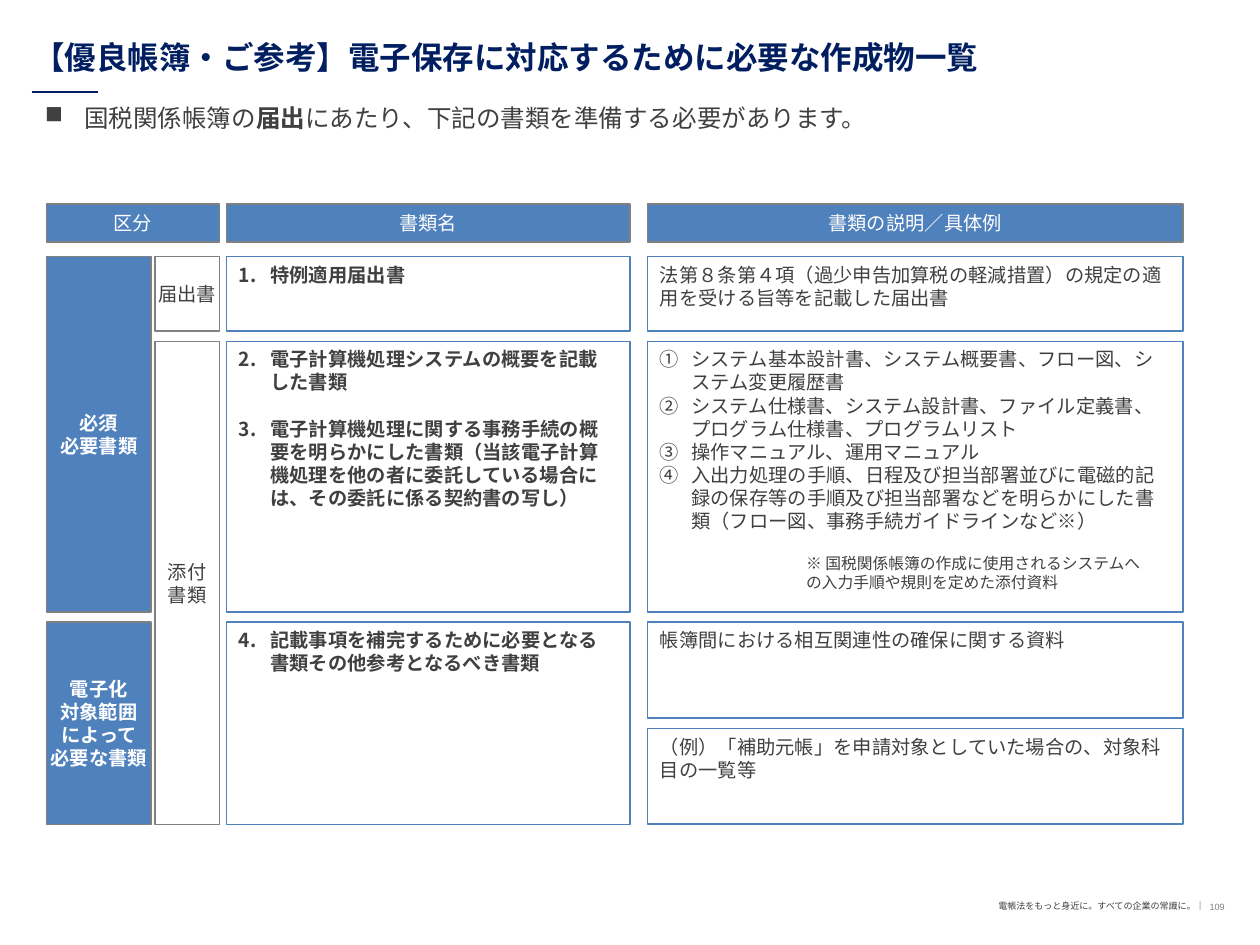
from lxml.etree import SubElement
from pptx import Presentation
from pptx.dml.color import RGBColor
from pptx.enum.shapes import MSO_CONNECTOR, MSO_SHAPE
from pptx.enum.text import MSO_ANCHOR, PP_ALIGN
from pptx.oxml.ns import qn
from pptx.util import Pt

NAVY = RGBColor(0x00, 0x1E, 0x60)
RULE = RGBColor(0x00, 0x1F, 0x60)
BLUE = RGBColor(0x4F, 0x81, 0xBD)
GRAY = RGBColor(0x80, 0x80, 0x80)
DARK = RGBColor(0x40, 0x40, 0x40)
WHITE = RGBColor(0xFF, 0xFF, 0xFF)
NOTO, KARLA, ARIAL = "Noto Sans CJK JP", "Karla", "Arial"


def add_run(p, text, size, color=DARK, bold=False, font=NOTO):
    r = p.add_run()
    r.text = text
    r.font.size = Pt(size)
    r.font.bold = bold
    r.font.color.rgb = color
    r.font.name = font
    SubElement(r._r.get_or_add_rPr(), qn("a:ea"), typeface=NOTO)


def add_bullet(p, indent, tag, **attrs):
    pPr = p._p.get_or_add_pPr()
    pPr.set("marL", str(Pt(indent)))
    pPr.set("indent", str(-Pt(indent)))
    SubElement(pPr, qn(tag), **attrs)


def paragraphs(tf, count):
    return [tf.paragraphs[0]] + [tf.add_paragraph() for _ in range(count - 1)]


def text_box(s, x, y, w, h):
    tf = s.shapes.add_textbox(Pt(x), Pt(y), Pt(w), Pt(h)).text_frame
    tf.word_wrap = True
    return tf


def box(s, x, y, w, h, fill, line):
    sp = s.shapes.add_shape(MSO_SHAPE.RECTANGLE, Pt(x), Pt(y), Pt(w), Pt(h))
    sp.shadow.inherit = False
    if fill is None:
        sp.fill.background()
    else:
        sp.fill.solid()
        sp.fill.fore_color.rgb = fill
    sp.line.color.rgb = line
    sp.line.width = Pt(1)
    return sp.text_frame


def label(s, x, y, w, h, lines, fill=BLUE, color=WHITE, bold=False):
    tf = box(s, x, y, w, h, fill, GRAY)
    tf.word_wrap = False
    tf.vertical_anchor = MSO_ANCHOR.MIDDLE
    for p, text in zip(paragraphs(tf, len(lines)), lines):
        p.alignment = PP_ALIGN.CENTER
        add_run(p, text, 11, color, bold, KARLA)


def body(s, x, y, w, h, items, scheme=None, start=1, gap=0, bold=False, font=NOTO):
    tf = box(s, x, y, w, h, WHITE, BLUE)
    tf.word_wrap = True
    tf.vertical_anchor = MSO_ANCHOR.TOP
    for i, (p, text) in enumerate(zip(paragraphs(tf, len(items)), items)):
        p.alignment = PP_ALIGN.LEFT
        if i and gap:
            p.space_before = Pt(gap)
        if scheme:
            add_bullet(p, 18, "a:buAutoNum", type=scheme, startAt=str(start + i))
        add_run(p, text, 11, bold=bold, font=font)


def heading(s, x, y, w):
    add_run(text_box(s, x, y, w, 35).paragraphs[0],
            "【優良帳簿・ご参考】電子保存に対応するために必要な作成物一覧", 18, NAVY, True)
    line = s.shapes.add_connector(MSO_CONNECTOR.STRAIGHT, Pt(x + 6), Pt(y + 34.6),
                                  Pt(x + 44), Pt(y + 34.6))
    line.line.color.rgb = RULE
    line.line.width = Pt(1)
    SubElement(line._element.spPr, qn("a:effectLst"))
    p = text_box(s, x + 6.5, y + 37.4, w - 12, 47.5).paragraphs[0]
    add_bullet(p, 22.5, "a:buChar", char="■")
    for text, bold in [("国税関係帳簿の", False), ("届出", True),
                       ("にあたり、下記の書類を準備する必要があります。", False)]:
        add_run(p, text, 14, bold=bold)


def document_table(s, x, y):
    kind_x, name_x, note_x = x + 62, x + 103, x + 343.5
    group_w, kind_w, name_w, note_w = 60, 37, 230.5, 306
    gap = 6
    row1, row2, row3 = y + 30, y + 78.5, y + 239
    h1, h2, h3 = 42.5, 154.5, 115.5
    half = (h3 - gap) / 2

    for left, w, text in [(x, kind_x + kind_w - x, "区分"), (name_x, name_w, "書類名"),
                          (note_x, note_w, "書類の説明／具体例")]:
        label(s, left, y, w, 21.6, [text])

    label(s, x, row1, group_w, row2 + h2 - row1, ["必須", "必要書類"], bold=True)
    label(s, x, row3, group_w, h3,
          ["電子化", "対象範囲", "によって", "必要な書類"], bold=True)
    label(s, kind_x, row1, kind_w, h1, ["届出書"], None, DARK)
    label(s, kind_x, row2, kind_w, row3 + h3 - row2, ["添付", "書類"], None, DARK)

    names = [
        (row1, h1, 1, ["特例適用届出書"]),
        (row2, h2, 2, [
            "電子計算機処理システムの概要を記載した書類",
            "電子計算機処理に関する事務手続の概要を明らかにした書類（当該電子計算機処理を"
            "他の者に委託している場合には、その委託に係る契約書の写し）"]),
        (row3, h3, 4, ["記載事項を補完するために必要となる書類その他参考となるべき書類"]),
    ]
    for top, h, start, items in names:
        body(s, name_x, top, name_w, h, items, "arabicPeriod", start, 13.2, True, KARLA)

    notes = [
        (row1, h1, None, [
            "法第８条第４項（過少申告加算税の軽減措置）の規定の適用を受ける旨等を記載した届出書"]),
        (row2, h2, "circleNumDbPlain", [
            "システム基本設計書、システム概要書、フロー図、システム変更履歴書",
            "システム仕様書、システム設計書、ファイル定義書、プログラム仕様書、プログラムリスト",
            "操作マニュアル、運用マニュアル",
            "入出力処理の手順、日程及び担当部署並びに電磁的記録の保存等の手順及び担当部署などを"
            "明らかにした書類（フロー図、事務手続ガイドラインなど※）"]),
        (row3, half, None, ["帳簿間における相互関連性の確保に関する資料"]),
        (row3 + half + gap, half, None, [
            "（例）「補助元帳」を申請対象としていた場合の、対象科目の一覧等"]),
    ]
    for top, h, scheme, items in notes:
        body(s, note_x, top, note_w, h, items, scheme)

    tf = text_box(s, note_x + 83.5, row2 + 118, 206, 40)
    add_run(tf.paragraphs[0],
            "※ 国税関係帳簿の作成に使用されるシステムへの入力手順や規則を定めた添付資料", 9)


def footer(s, x, y):
    tf = text_box(s, x, y + 1.2, 137, 13.7)
    tf.paragraphs[0].alignment = PP_ALIGN.RIGHT
    add_run(tf.paragraphs[0], "電帳法をもっと身近に。すべての企業の常識に。｜", 5.2)
    tf = text_box(s, x + 111.6, y, 40.3, 17.3)
    tf.margin_left = tf.margin_top = tf.margin_bottom = 0
    tf.margin_right = Pt(10.8)
    tf.vertical_anchor = MSO_ANCHOR.MIDDLE
    tf.paragraphs[0].alignment = PP_ALIGN.RIGHT
    add_run(tf.paragraphs[0], "109", 5.2, GRAY, font=ARIAL)


def main():
    prs = Presentation()
    prs.slide_width, prs.slide_height = Pt(720), Pt(540)
    s = prs.slides.add_slide(prs.slide_layouts[6])
    heading(s, 12, 18, 708)
    document_table(s, 26.5, 116.6)
    footer(s, 558.7, 509.8)
    prs.save("out.pptx")


if __name__ == "__main__":
    main()
